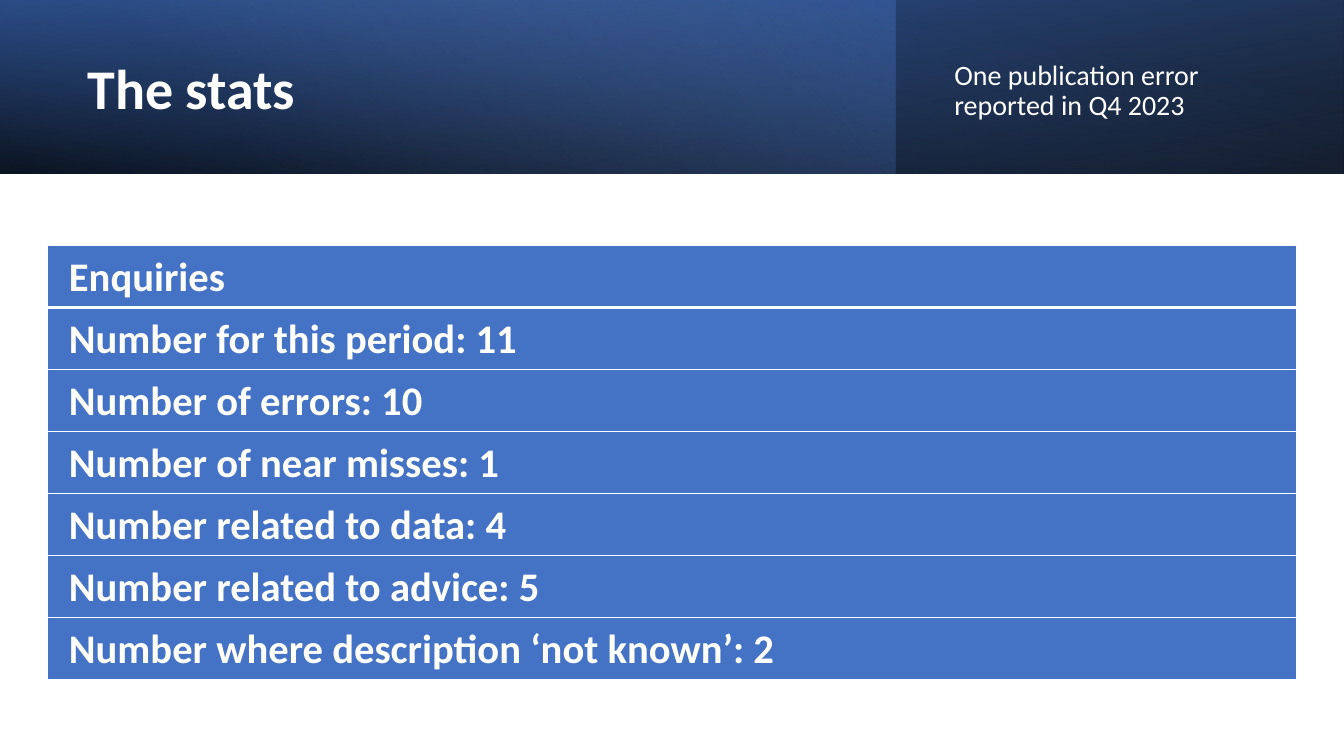
from lxml import etree
from pptx import Presentation
from pptx.dml.color import RGBColor
from pptx.enum.shapes import MSO_SHAPE
from pptx.enum.text import MSO_ANCHOR, PP_ALIGN
from pptx.oxml import parse_xml
from pptx.oxml.ns import nsdecls, qn
from pptx.util import Pt

RECTANGLE = MSO_SHAPE.RECTANGLE
MIDDLE = MSO_ANCHOR.MIDDLE
LEFT, JUSTIFY = PP_ALIGN.LEFT, PP_ALIGN.JUSTIFY

WHITE = RGBColor(0xFF, 0xFF, 0xFF)
BLACK = RGBColor(0x00, 0x00, 0x00)
BLUE = RGBColor(0x44, 0x72, 0xC4)
DEEP_BLUE = RGBColor(0x2F, 0x55, 0x97)
PALE_BLUE = RGBColor(0x8F, 0xAA, 0xDC)
FONT = "Calibri"

# Content
TITLE = "The stats"
SUBTITLE = "One publication error reported in Q4 2023"
STATS = [
    ("Enquiries", JUSTIFY),
    ("Number for this period: 11", JUSTIFY),
    ("Number of errors: 10", LEFT),
    ("Number of near misses: 1", LEFT),
    ("Number related to data: 4", LEFT),
    ("Number related to advice: 5", LEFT),
    ("Number where description ‘not known’: 2", LEFT),
]

# Layout in points
PAGE_WIDTH, PAGE_HEIGHT = 960, 540
BANNER_HEIGHT = 124
TABLE_LEFT, TABLE_TOP, TABLE_WIDTH = 34, 175.3, 892
ROW_HEIGHT = 44.3

# Banner layers: width, rotation, flipped, angle, stops (position %, colour, opacity %)
BANNER_LAYERS = [
    (PAGE_WIDTH, 180, True, 100, [(0, BLACK, 96), (100, DEEP_BLUE, 100)]),
    (640, 0, False, 140, [(0, BLUE, 41), (74, PALE_BLUE, 0)]),
    (PAGE_WIDTH, 0, True, 260, [(0, BLACK, 63), (78, BLUE, 15)]),
]


def add_banner_layer(page, width, rotation, flipped, angle, stops):
    layer = page.shapes.add_shape(RECTANGLE, 0, 0, Pt(width), Pt(BANNER_HEIGHT))
    layer.shadow.inherit = False
    layer.line.fill.background()
    layer.rotation = rotation
    properties = layer._element.spPr
    if flipped:
        properties.find(qn("a:xfrm")).set("flipH", "1")
    stop_xml = "".join(
        f'<a:gs pos="{position * 1000}"><a:srgbClr val="{colour}">'
        f'<a:alpha val="{opacity * 1000}"/></a:srgbClr></a:gs>'
        for position, colour, opacity in stops
    )
    gradient = parse_xml(
        f'<a:gradFill {nsdecls("a")} rotWithShape="1"><a:gsLst>{stop_xml}</a:gsLst>'
        f'<a:lin ang="{angle * 60000}" scaled="0"/></a:gradFill>'
    )
    properties.find(qn("a:prstGeom")).addnext(gradient)


def style_paragraph(para, size, bold, spacing):
    para.line_spacing = spacing
    para.font.name = FONT
    para.font.size = Pt(size)
    para.font.bold = bold
    para.font.color.rgb = WHITE


def add_text(page, text, left, top, width, height, size, bold):
    box = page.shapes.add_textbox(Pt(left), Pt(top), Pt(width), Pt(height))
    frame = box.text_frame
    frame.word_wrap = True
    frame.vertical_anchor = MIDDLE
    frame.text = text
    style_paragraph(frame.paragraphs[0], size, bold, 0.9)


def set_borders(cell, top, bottom):
    properties = cell._tc.get_or_add_tcPr()
    widths = {"lnL": 1, "lnR": 1, "lnT": top, "lnB": bottom}
    for index, (side, width) in enumerate(widths.items()):
        border = etree.Element(qn(f"a:{side}"), w=str(Pt(width)))
        fill = etree.SubElement(border, qn("a:solidFill"))
        etree.SubElement(fill, qn("a:srgbClr"), val=str(WHITE))
        properties.insert(index, border)


def add_stats_table(page):
    table = page.shapes.add_table(
        len(STATS), 1, Pt(TABLE_LEFT), Pt(TABLE_TOP),
        Pt(TABLE_WIDTH), Pt(ROW_HEIGHT * len(STATS)),
    ).table
    for index, (text, alignment) in enumerate(STATS):
        table.rows[index].height = Pt(ROW_HEIGHT)
        cell = table.cell(index, 0)
        cell.margin_left = cell.margin_right = Pt(15.3)
        cell.margin_top = cell.margin_bottom = 0
        cell.fill.solid()
        cell.fill.fore_color.rgb = BLUE
        # A thick rule parts the heading from the figures
        set_borders(cell, 3 if index == 1 else 1, 3 if index == 0 else 1)
        cell.text = text
        para = cell.text_frame.paragraphs[0]
        para.alignment = alignment
        para.space_after = Pt(10)
        style_paragraph(para, 29, True, 1.15)


def main():
    deck = Presentation()
    deck.slide_width, deck.slide_height = Pt(PAGE_WIDTH), Pt(PAGE_HEIGHT)
    page = deck.slides.add_slide(deck.slide_layouts[6])

    # Banner
    for layer in BANNER_LAYERS:
        add_banner_layer(page, *layer)
    add_text(page, TITLE, 55.4, 19.4, 556, 91.4, 40, True)
    add_text(page, SUBTITLE, 674.6, 31, 255, 69, 20, False)

    # Figures
    add_stats_table(page)
    deck.save("out.pptx")


if __name__ == "__main__":
    main()
